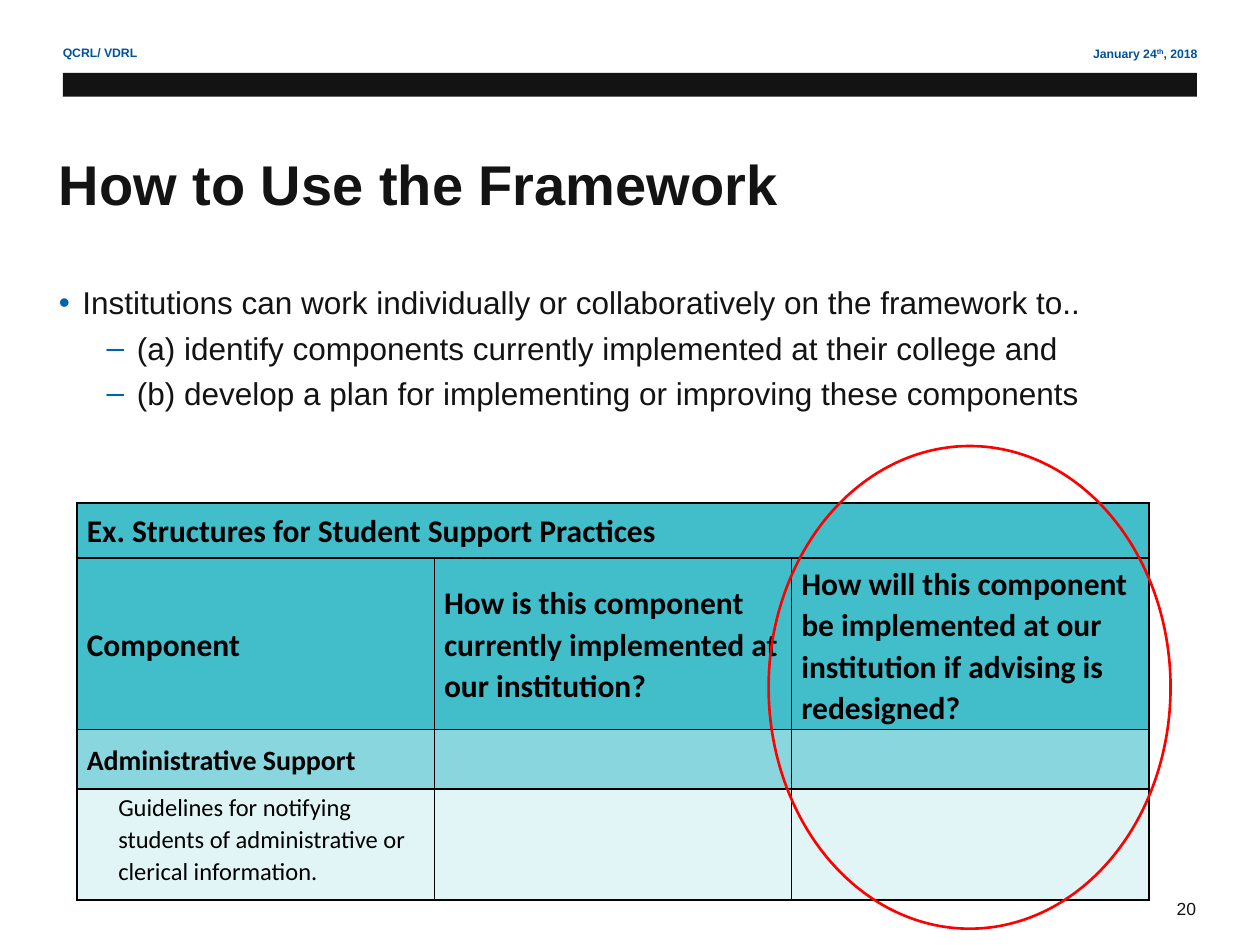
from dataclasses import dataclass

from lxml.etree import SubElement
from pptx import Presentation
from pptx.dml.color import RGBColor
from pptx.enum.shapes import MSO_SHAPE as Shape
from pptx.enum.text import MSO_ANCHOR as Anchor, PP_ALIGN as Align
from pptx.oxml import parse_xml
from pptx.oxml.ns import nsdecls, qn
from pptx.util import Pt


@dataclass(frozen=True)
class Theme:
    sans: str = "Arial"
    table_font: str = "Calibri"
    ink: str = "141313"
    navy: str = "00539B"
    bullet: str = "0065A4"
    black: str = "000000"
    red: str = "FF0000"
    head: str = "42BECA"
    group: str = "8AD6DE"
    detail: str = "E1F5F7"
    title_size: int = 32
    body_size: int = 18
    group_size: int = 16
    detail_size: int = 14
    page_size: int = 10
    label_size: int = 7


class Deck:
    def __init__(self, theme):
        self.t = theme
        self.prs = Presentation()
        self.prs.slide_width, self.prs.slide_height = Pt(720), Pt(540)
        self.s = self.prs.slides.add_slide(self.prs.slide_layouts[6])

    def style(self, r, size, color, bold=False, font=None):
        f = r.font
        f.name, f.size, f.bold = font or self.t.sans, Pt(size), bold
        f.color.rgb = RGBColor.from_string(color)

    def text(self, box, content, size, color, bold=False, align=Align.LEFT,
             before=0, anchor=Anchor.TOP):
        tf = self.s.shapes.add_textbox(*map(Pt, box)).text_frame
        tf.word_wrap, tf.vertical_anchor = True, anchor
        tf.text = content
        p = tf.paragraphs[0]
        p.alignment, p.space_before = align, Pt(before)
        self.style(p.runs[0], size, color, bold)
        return p

    def append_run(self, p, content, size, color, bold=False, baseline=0):
        r = p.add_run()
        r.text = content
        self.style(r, size, color, bold)
        r.font._element.set("baseline", str(baseline * 1000))

    def bullets(self, box, items, levels):
        tf = self.s.shapes.add_textbox(*map(Pt, box)).text_frame
        tf.word_wrap = True
        tf.text = "\n".join(content for _, content in items)
        for p, (level, _) in zip(tf.paragraphs, items):
            mark, left, hang = levels[level]
            p.level, p.space_before = level, Pt(4.3)
            pPr = p._p.get_or_add_pPr()
            pPr.set("marL", str(Pt(left)))
            pPr.set("indent", str(Pt(-hang)))
            color = SubElement(pPr, qn("a:buClr"))
            SubElement(color, qn("a:srgbClr"), val=self.t.bullet)
            SubElement(pPr, qn("a:buFont"), typeface=self.t.sans)
            SubElement(pPr, qn("a:buChar"), char=mark)
            self.style(p.runs[0], self.t.body_size, self.t.ink)

    def shape(self, kind, box, fill=None, line=None, width=1.5):
        sp = self.s.shapes.add_shape(kind, *map(Pt, box))
        sp.shadow.inherit = False
        if fill:
            sp.fill.solid()
            sp.fill.fore_color.rgb = RGBColor.from_string(fill)
        else:
            sp.fill.background()
        if line:
            sp.line.color.rgb = RGBColor.from_string(line)
            sp.line.width = Pt(width)
        else:
            sp.line.fill.background()

    def cell(self, cell, content, fill, size, bold, indent, pad, anchor):
        cell.fill.solid()
        cell.fill.fore_color.rgb = RGBColor.from_string(fill)
        cell.margin_left = cell.margin_right = Pt(5.6)
        cell.margin_top = cell.margin_bottom = Pt(pad)
        cell.vertical_anchor = anchor
        tcPr = cell._tc.get_or_add_tcPr()
        for i, side in enumerate("LRTB"):
            tcPr.insert(i, parse_xml(
                f'<a:ln{side} {nsdecls("a")} w="{Pt(1)}"><a:solidFill>'
                f'<a:srgbClr val="{self.t.black}"/></a:solidFill></a:ln{side}>'))
        if content:
            cell.text = content
            p = cell.text_frame.paragraphs[0]
            p.line_spacing, p.space_after = 1.07, Pt(8)
            p._p.get_or_add_pPr().set("marL", str(Pt(indent)))
            self.style(p.runs[0], size, self.t.black, bold, self.t.table_font)

    def table(self, left, top, col_width, rows):
        cols = max(len(row["cells"]) for row in rows)
        height = sum(row["height"] for row in rows)
        box = (left, top, col_width * cols, height)
        tbl = self.s.shapes.add_table(len(rows), cols, *map(Pt, box)).table
        tbl.first_row = tbl.horz_banding = False
        for col in tbl.columns:
            col.width = Pt(col_width)
        for i, row in enumerate(rows):
            tbl.rows[i].height = Pt(row["height"])
            texts = row["cells"] + [""] * (cols - len(row["cells"]))
            for j, content in enumerate(texts):
                self.cell(tbl.cell(i, j), content, *row["look"])
        tbl.cell(0, 0).merge(tbl.cell(0, cols - 1))


def main():
    t = Theme()
    deck = Deck(t)

    date = deck.text((462.3, 23, 229, 16), "January 24", t.label_size, t.navy,
                     True, Align.RIGHT, 2.3)
    deck.append_run(date, "th", t.label_size, t.navy, True, baseline=30)
    deck.append_run(date, ", 2018", t.label_size, t.navy, True)
    deck.text((665.3, 509.8, 33, 19.4), "20", t.page_size, t.ink, before=5)
    deck.shape(Shape.RECTANGLE, (36, 41.6, 648, 13.7), fill=t.ink)
    deck.text((28.8, 22.3, 256, 16), "QCRL/ VDRL", t.label_size, t.navy,
              True, before=2.3)

    deck.bullets(
        (26.6, 158.4, 648, 111),
        [(0, "Institutions can work individually or collaboratively on the framework to.."),
         (1, "(a) identify components currently implemented at their college and"),
         (1, "(b) develop a plan for implementing or improving these components")],
        [("•", 13.5, 13.5), ("–", 44.6, 17.3)])
    deck.text((26.6, 59.8, 648, 90), "How to Use the Framework",
              t.title_size, t.ink, True, anchor=Anchor.MIDDLE)

    head = (t.head, t.body_size, True, 0, 2.8, Anchor.MIDDLE)
    group = (t.group, t.group_size, True, 0, 1.4, Anchor.MIDDLE)
    detail = (t.detail, t.detail_size, False, 18, 1.4, Anchor.TOP)
    deck.table(44, 287.4, 204.2, [
        {"height": 31.6, "look": head,
         "cells": ["Ex. Structures for Student Support Practices"]},
        {"height": 96, "look": head,
         "cells": ["Component",
                   "How is this component currently implemented at our institution?",
                   "How will this component be implemented at our institution"
                   " if advising is redesigned?"]},
        {"height": 33.8, "look": group, "cells": ["Administrative Support"]},
        {"height": 63.4, "look": detail,
         "cells": ["Guidelines for notifying students of administrative"
                   " or clerical information."]},
    ])
    deck.shape(Shape.OVAL, (439.2, 254.9, 229.7, 275.8), line=t.red)

    deck.prs.save("out.pptx")


if __name__ == "__main__":
    main()
